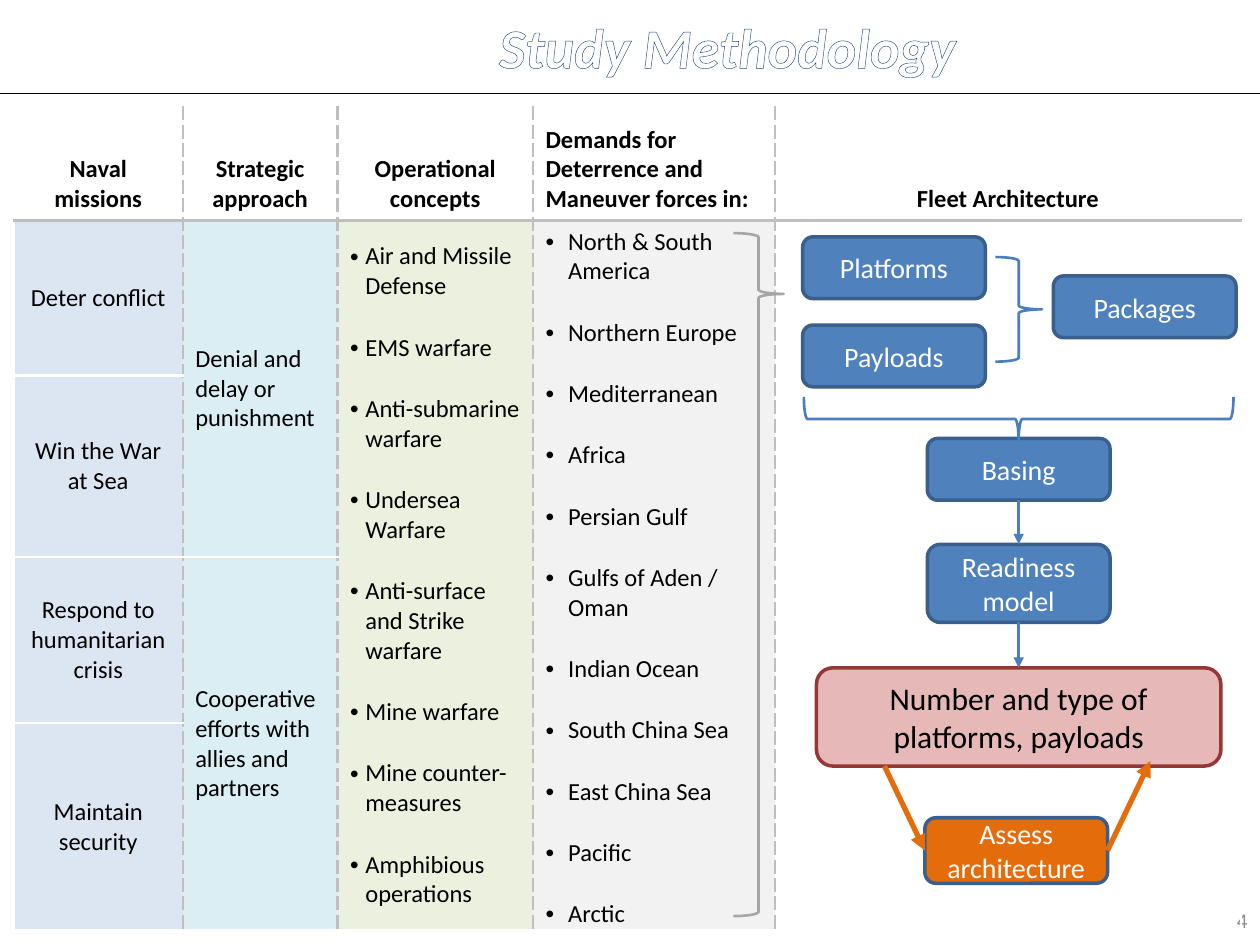
import pptx
import pptx.util
import pptx.oxml
import pptx.dml.color
import pptx.enum.text
import pptx.enum.shapes
import pptx.oxml.ns
import lxml.etree

Inches, Pt = pptx.util.Inches, pptx.util.Pt
ALIGN = pptx.enum.text.PP_ALIGN
ANCHOR = pptx.enum.text.MSO_ANCHOR
SHAPE = pptx.enum.shapes.MSO_SHAPE
STRAIGHT = pptx.enum.shapes.MSO_CONNECTOR.STRAIGHT

HUES = {
    "black": "000000", "white": "FFFFFF", "navy": "1F497D", "page": "8C8C8C",
    "rule": "BFBFBF", "sky": "DCE6F2", "aqua": "DBEEF4", "lime": "EBF1DE",
    "pale": "F2F2F2", "blue": "4F81BD", "edge": "3A5F8C", "flow": "4B7EBC",
    "grey": "A6A6A6", "pink": "E6B9B8", "red": "953735", "orange": "E46C0A",
}
HEADS = ["Naval missions", "Strategic approach", "Operational concepts",
         "Demands for\nDeterrence and Maneuver forces in:", "Fleet Architecture"]
TASKS = ["Deter conflict", "Win the War at Sea",
         "Respond to humanitarian crisis", "Maintain security"]
PLANS = ["Denial and delay or punishment",
         "Cooperative efforts with allies and partners"]
IDEAS = ["Air and Missile Defense", "EMS warfare", "Anti-submarine warfare",
         "Undersea Warfare", "Anti-surface and Strike warfare", "Mine warfare",
         "Mine counter-measures", "Amphibious operations"]
AREAS = ["North & South America", "Northern Europe", "Mediterranean", "Africa",
         "Persian Gulf", "Gulfs of Aden / Oman", "Indian Ocean",
         "South China Sea", "East China Sea", "Pacific", "Arctic"]
COLS = [1.34, 1.23, 1.55, 1.92, 3.7]
ROWS = [0.9, 1.23, 1.44, 1.32, 1.64]
FILLS = ["sky", "aqua", "lime", "pale", None]
SPANS = [1, 2, 4, 4, 4]
BOXES = [
    ("Basing", 7.36, 3.48, 1.45, 0.49, "blue", "edge", "white", 16),
    ("Payloads", 6.37, 2.58, 1.45, 0.49, "blue", "edge", "white", 16),
    ("Platforms", 6.37, 1.88, 1.45, 0.49, "blue", "edge", "white", 16),
    ("Packages", 8.36, 2.19, 1.45, 0.49, "blue", "edge", "white", 16),
    ("Readiness model", 7.36, 4.32, 1.45, 0.62, "blue", "edge", "white", 16),
    ("Number and type of platforms, payloads",
     6.48, 5.3, 3.21, 0.78, "pink", "red", "black", 18),
    ("Assess architecture", 7.34, 6.49, 1.45, 0.52, "orange", "edge", "white", 16),
]
BRACES = [
    (7.91, 1.62, 0.35, 3.41, 270, "flow", 0.5),
    (7.9, 2.04, 0.37, 0.83, 180, "flow", 0.5),
    (5.82, 1.85, 0.4, 5.42, 180, "grey", 0.911),
]


def tint(name):
    """Return the colour with this name."""
    return pptx.dml.color.RGBColor.from_string(HUES[name])


def node(parent, tag, **attrs):
    """Append a drawing element to a parent."""
    return lxml.etree.SubElement(parent, pptx.oxml.ns.qn("a:" + tag), attrs)


def style(frame, size, hue, align, bold=False):
    """Format every paragraph of a text frame."""
    for para in frame.paragraphs:
        para.alignment = align
        for run in para.runs:
            run.font.name, run.font.size = "Calibri", Pt(size)
            run.font.bold, run.font.color.rgb = bold, tint(hue)


def border(cell, side, hue, dash="solid"):
    """Draw one side of a table cell."""
    edge = node(cell._tc.get_or_add_tcPr(), "ln" + side, w=str(Pt(1.5)))
    node(node(edge, "solidFill"), "srgbClr", val=HUES[hue])
    node(edge, "prstDash", val=dash)


def bullets(frame, indent):
    """Turn the paragraphs of a frame into a bullet list."""
    for para in frame.paragraphs:
        props = para._p.get_or_add_pPr()
        props.set("marL", str(Inches(indent)))
        props.set("indent", str(-Inches(indent)))
        node(props, "buFont", typeface="Arial")
        node(props, "buChar", char="•")
        para.space_after = Pt(18)


def grid(slide):
    """Build the table of missions, concepts and demands."""
    table = slide.shapes.add_table(
        len(ROWS), len(COLS), Inches(0.11), Inches(0.85),
        Inches(sum(COLS)), Inches(sum(ROWS))).table
    table.first_row = table.horz_banding = False
    for col, width in zip(table.columns, COLS):
        col.width = Inches(width)
    for row, height in zip(table.rows, ROWS):
        row.height = Inches(height)
    for c, span in enumerate(SPANS):
        for r in range(1, len(ROWS), span):
            if span > 1:
                table.cell(r, c).merge(table.cell(r + span - 1, c))
    texts = [TASKS, PLANS, ["\n".join(IDEAS)], ["\n".join(AREAS)], [""]]
    for c, (head, items, span) in enumerate(zip(HEADS, texts, SPANS)):
        for r in range(len(ROWS)):
            cell = table.cell(r, c)
            if c > 0:
                border(cell, "L", "rule", "sysDash")
            if c < len(COLS) - 1:
                border(cell, "R", "rule", "sysDash")
            if not cell.is_spanned:
                if r:
                    border(cell, "T", "rule" if r == 1 else "white")
                border(cell, "B", "white" if r else "rule")
                cell.text_frame.text = items[(r - 1) // span] if r else head
                cell.vertical_anchor = ANCHOR.MIDDLE if r else ANCHOR.BOTTOM
                if r and c in (2, 3):
                    bullets(cell.text_frame, 0.12 if c == 2 else 0.18)
                mid = c == 0 or (r == 0 and c != 3)
                style(cell.text_frame, 14, "black",
                      ALIGN.CENTER if mid else ALIGN.LEFT, r == 0)
            if r and FILLS[c]:
                cell.fill.solid()
                cell.fill.fore_color.rgb = tint(FILLS[c])
            else:
                cell.fill.background()


def block(slide, text, x, y, w, h, fill, edge, ink, size):
    """Add one rounded box with centred text."""
    shape = slide.shapes.add_shape(
        SHAPE.ROUNDED_RECTANGLE, Inches(x), Inches(y), Inches(w), Inches(h))
    shape.shadow.inherit = False
    shape.fill.solid()
    shape.fill.fore_color.rgb = tint(fill)
    shape.line.color.rgb, shape.line.width = tint(edge), Pt(2)
    shape.text_frame.text = text
    shape.text_frame.word_wrap = True
    shape.text_frame.vertical_anchor = ANCHOR.MIDDLE
    style(shape.text_frame, size, ink, ALIGN.CENTER)
    return shape


def brace(slide, x, y, w, h, turn, hue, point):
    """Add one turned brace."""
    shape = slide.shapes.add_shape(
        SHAPE.LEFT_BRACE, Inches(x), Inches(y), Inches(w), Inches(h))
    shape.rotation = turn
    shape.shadow.inherit = False
    shape.fill.background()
    shape.line.color.rgb, shape.line.width = tint(hue), Pt(1.5)
    shape.adjustments[1] = point


def link(slide, start, end, hue, width, arrow=True):
    """Join two ends, each a point or a shape with a side."""
    (x1, y1), (x2, y2) = [
        (0, 0) if hasattr(p[0], "shape_id") else p for p in (start, end)]
    line = slide.shapes.add_connector(
        STRAIGHT, Inches(x1), Inches(y1), Inches(x2), Inches(y2))
    if hasattr(start[0], "shape_id"):
        line.begin_connect(*start)
    if hasattr(end[0], "shape_id"):
        line.end_connect(*end)
    line.line.color.rgb, line.line.width = tint(hue), Pt(width)
    if arrow:
        node(line.line._get_or_add_ln(), "tailEnd", type="triangle")
    node(line._element.spPr, "effectLst")


def main():
    """Build the study methodology slide."""
    deck = pptx.Presentation()
    deck.slide_width, deck.slide_height = Inches(10), Inches(7.5)
    slide = deck.slides.add_slide(deck.slide_layouts[5])
    link(slide, (0, 0.74), (10, 0.74), "black", 0.75, False)
    title = slide.shapes.title
    title.left, title.top = Inches(1.55), Inches(0)
    title.width, title.height = Inches(8.45), Inches(0.73)
    title.text_frame.text = "Study Methodology"
    title.text_frame.vertical_anchor = ANCHOR.MIDDLE
    style(title.text_frame, 32, "white", ALIGN.CENTER, True)
    run = title.text_frame.paragraphs[0].runs[0]
    run.font.italic = True
    props = run._r.get_or_add_rPr()
    rim = node(props, "ln", w=str(Pt(0.75)))
    node(node(rim, "solidFill"), "srgbClr", val=HUES["navy"])
    props.insert(0, rim)
    page = slide.shapes.add_textbox(
        Inches(7.67), Inches(7.1), Inches(2.33), Inches(0.4)).text_frame
    page.text, page.word_wrap = "4", True
    page.vertical_anchor = ANCHOR.MIDDLE
    style(page, 12, "page", ALIGN.RIGHT)
    grid(slide)
    boxes = {box[0].split()[0]: block(slide, *box) for box in BOXES}
    for item in BRACES:
        brace(slide, *item)
    chain = [boxes[key] for key in ("Basing", "Readiness", "Number")]
    for upper, lower in zip(chain, chain[1:]):
        link(slide, (upper, 2), (lower, 0), "flow", 1.5)
    link(slide, (7.02, 6.08), (boxes["Assess"], 1), "orange", 3)
    link(slide, (boxes["Assess"], 3), (9.13, 6.04), "orange", 3)
    deck.save("out.pptx")


if __name__ == "__main__":
    main()
